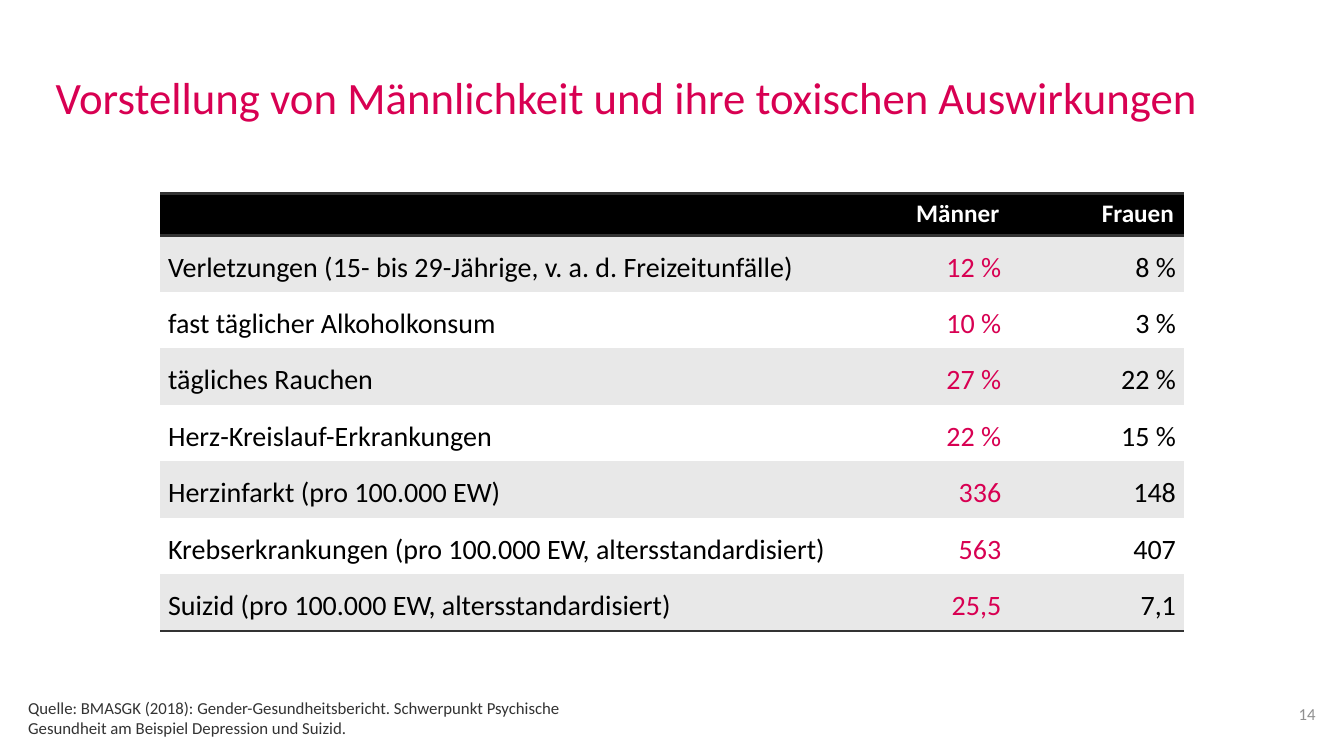
from lxml.etree import SubElement
from pptx import Presentation
from pptx.dml.color import RGBColor
from pptx.enum.text import MSO_ANCHOR, PP_ALIGN
from pptx.oxml.ns import qn
from pptx.util import Pt

TITLE = "Vorstellung von Männlichkeit und ihre toxischen Auswirkungen"
SOURCE = ("Quelle: BMASGK (2018): Gender-Gesundheitsbericht. Schwerpunkt "
          "Psychische Gesundheit am Beispiel Depression und Suizid.")
PAGE = "14"
ROWS = [
    ("", "Männer", "Frauen"),
    ("Verletzungen (15- bis 29-Jährige, v. a. d. Freizeitunfälle)", "12 %", "8 %"),
    ("fast täglicher Alkoholkonsum", "10 %", "3 %"),
    ("tägliches Rauchen", "27 %", "22 %"),
    ("Herz-Kreislauf-Erkrankungen", "22 %", "15 %"),
    ("Herzinfarkt (pro 100.000 EW)", "336", "148"),
    ("Krebserkrankungen (pro 100.000 EW, altersstandardisiert)", "563", "407"),
    ("Suizid (pro 100.000 EW, altersstandardisiert)", "25,5", "7,1"),
]

FONT = "Calibri"
MAGENTA = RGBColor(0xD8, 0x00, 0x52)
DARK = RGBColor(0x33, 0x33, 0x33)
GREY = RGBColor(0x90, 0x90, 0x90)
BAND = RGBColor(0xE8, 0xE8, 0xE8)
BLACK = RGBColor(0, 0, 0)
WHITE = RGBColor(0xFF, 0xFF, 0xFF)

COL_WIDTHS = (481.9, 124.8, 124.8)
HEADER_HEIGHT, ROW_HEIGHT = 30, 40.1
CELL_INSET = 5.76
NO_STYLE = "{2D5ABB26-0587-4C30-8999-92F81FD0307C}"


def style(p, size, color, align=PP_ALIGN.LEFT, spacing=1.0, bold=False):
    p.alignment = align
    p.line_spacing = spacing
    p.font.name = FONT
    p.font.size = Pt(size)
    p.font.bold = bold
    p.font.color.rgb = color


def set_insets(box, inset):
    box.margin_left = box.margin_right = Pt(inset)
    box.margin_top = box.margin_bottom = Pt(inset)


def add_text(s, text, left, top, width, height, size, color,
             anchor=MSO_ANCHOR.TOP, inset=None, **options):
    tf = s.shapes.add_textbox(Pt(left), Pt(top), Pt(width), Pt(height)).text_frame
    tf.word_wrap = True
    tf.vertical_anchor = anchor
    if inset is not None:
        set_insets(tf, inset)
    tf.text = text
    style(tf.paragraphs[0], size, color, **options)


def add_border(cell, tag):
    tcPr = cell._tc.get_or_add_tcPr()
    ln = SubElement(tcPr, qn(tag), w=str(Pt(2)))
    fill = SubElement(ln, qn("a:solidFill"))
    SubElement(fill, qn("a:srgbClr"), val=str(DARK))


def fill_cell(cell, text, row, col):
    header = row == 0
    if header:
        add_border(cell, "a:lnT")
    if row in (0, len(ROWS) - 1):
        add_border(cell, "a:lnB")
    cell.fill.solid()
    cell.fill.fore_color.rgb = BLACK if header else BAND if row % 2 else WHITE
    cell.text = text
    p = cell.text_frame.paragraphs[0]
    align = PP_ALIGN.RIGHT if col else PP_ALIGN.LEFT
    if header:
        style(p, 18, WHITE, align, bold=True)
    else:
        cell.vertical_anchor = MSO_ANCHOR.BOTTOM
        set_insets(cell, CELL_INSET)
        style(p, 20, MAGENTA if col == 1 else BLACK, align, 1.2)


def add_figures(s):
    heights = [HEADER_HEIGHT] + [ROW_HEIGHT] * (len(ROWS) - 1)
    table = s.shapes.add_table(len(ROWS), len(COL_WIDTHS), Pt(114.3), Pt(138.2),
                               Pt(sum(COL_WIDTHS)), Pt(sum(heights))).table
    table.horz_banding = False
    table._tbl.tblPr.find(qn("a:tableStyleId")).text = NO_STYLE
    for column, width in zip(table.columns, COL_WIDTHS):
        column.width = Pt(width)
    for row, values in enumerate(ROWS):
        table.rows[row].height = Pt(heights[row])
        for col, text in enumerate(values):
            fill_cell(table.cell(row, col), text, row, col)


def main():
    prs = Presentation()
    prs.slide_width, prs.slide_height = Pt(960), Pt(540)
    s = prs.slides.add_slide(prs.slide_layouts[6])
    add_text(s, TITLE, 32.6, 46.8, 894, 60.5, 32, MAGENTA, inset=7.2, spacing=0.9)
    add_text(s, SOURCE, 13, 494.6, 402.5, 36, 12, DARK)
    add_figures(s)
    add_text(s, PAGE, 889.2, 489.6, 57.6, 41, 12, GREY,
             anchor=MSO_ANCHOR.MIDDLE, inset=7.2, align=PP_ALIGN.RIGHT)
    prs.save("out.pptx")


if __name__ == "__main__":
    main()
